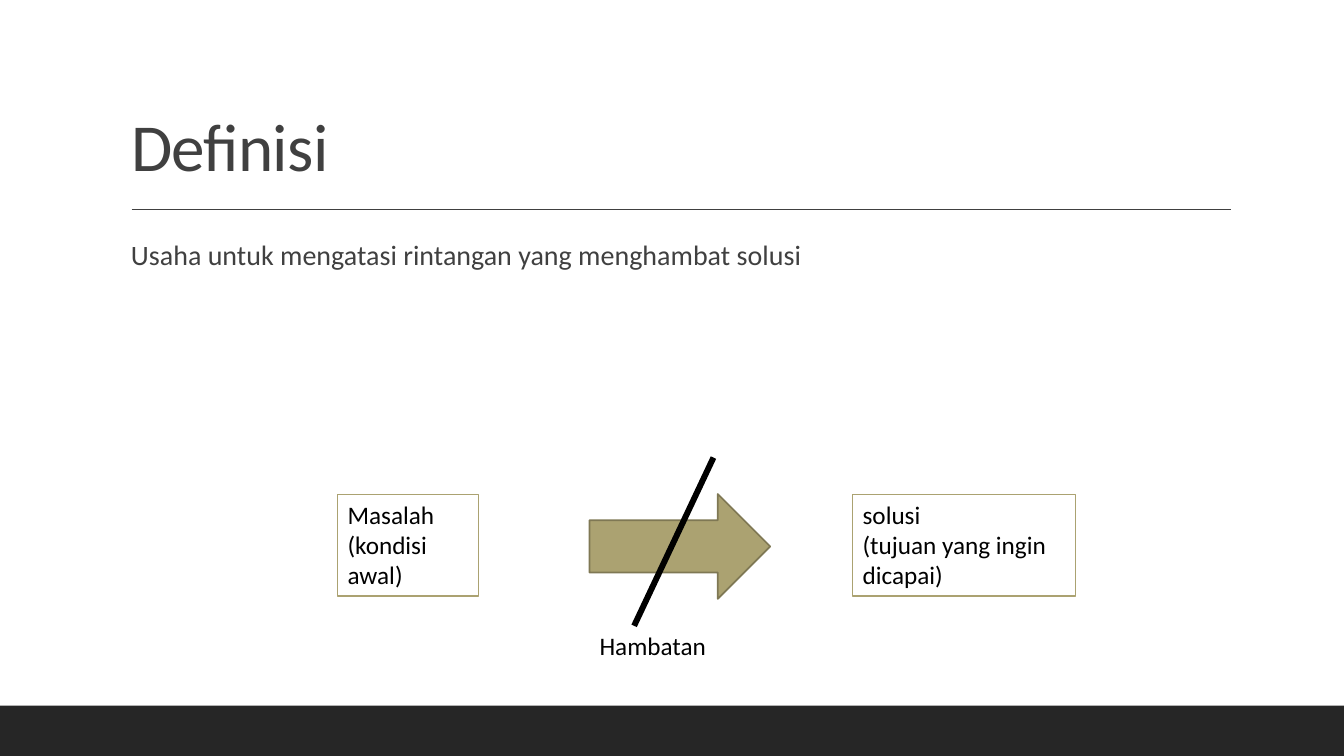
from pptx import Presentation
from pptx.dml.color import RGBColor
from pptx.enum.shapes import MSO_CONNECTOR as Connector, MSO_SHAPE as Shape
from pptx.enum.text import MSO_ANCHOR as Anchor, MSO_AUTO_SIZE as AutoSize, PP_ALIGN as Align
from pptx.oxml.ns import qn
from pptx.util import Cm, Pt

FONT = "Calibri"
DARK = RGBColor(0x26, 0x26, 0x26)
GREY = RGBColor(0x40, 0x40, 0x40)
BLACK = RGBColor(0, 0, 0)
OLIVE = RGBColor(0xAB, 0xA2, 0x71)
OLIVE_EDGE = RGBColor(0x7F, 0x78, 0x54)

FLOW_TOP = 12.45


def write(frame, lines, size, color):
    frame.word_wrap = True
    for number, line in enumerate(lines):
        para = frame.paragraphs[0] if number == 0 else frame.add_paragraph()
        para.text = line
        para.alignment = Align.LEFT
        para.font.name = FONT
        para.font.size = Pt(size)
        para.font.color.rgb = color


def add_title(page, text):
    title = page.shapes.title
    title.left, title.top, title.width, title.height = Cm(3.05), Cm(0.79), Cm(27.94), Cm(4.03)
    frame = title.text_frame
    write(frame, [text], 48, GREY)
    frame.auto_size = AutoSize.NONE
    frame.vertical_anchor = Anchor.BOTTOM
    para = frame.paragraphs[0]
    para.line_spacing = 0.9
    # Tighten the letters by half a point
    para.runs[0]._r.get_or_add_rPr().set("spc", "-50")


def add_text(page, left, top, width, height, lines, size=18, color=BLACK, border=None):
    box = page.shapes.add_textbox(Cm(left), Cm(top), Cm(width), Cm(height))
    write(box.text_frame, lines, size, color)
    if border is not None:
        box.line.color.rgb = border
        box.line.width = Pt(0.75)
    return box


def add_block(page, kind, left, top, width, height, fill, edge=None):
    block = page.shapes.add_shape(kind, Cm(left), Cm(top), Cm(width), Cm(height))
    block.shadow.inherit = False
    block.fill.solid()
    block.fill.fore_color.rgb = fill
    if edge is None:
        block.line.fill.background()
    else:
        block.line.color.rgb = edge
        block.line.width = Pt(1.25)


def add_line(page, start, end, color, weight):
    line = page.shapes.add_connector(
        Connector.STRAIGHT, Cm(start[0]), Cm(start[1]), Cm(end[0]), Cm(end[1]))
    line.line.color.rgb = color
    line.line.width = Pt(weight)
    properties = line._element.spPr
    properties.append(properties.makeelement(qn("a:effectLst"), {}))


def main():
    deck = Presentation()
    deck.slide_width, deck.slide_height = Cm(33.87), Cm(19.05)
    page = deck.slides.add_slide(deck.slide_layouts[5])

    # Footer band, title and rule
    add_block(page, Shape.RECTANGLE, 0, 17.78, 33.87, 1.27, DARK)
    add_line(page, (3.32, 5.28), (31.01, 5.28), GREY, 1)
    add_title(page, "Definisi")

    # Definition
    add_text(page, 3.05, 5.87, 27.94, 10.44,
             ["Usaha untuk mengatasi rintangan yang menghambat solusi"], 20, GREY)

    # Problem, arrow and solution
    add_block(page, Shape.RIGHT_ARROW, 14.86, FLOW_TOP, 4.55, 2.64, OLIVE, OLIVE_EDGE)
    add_text(page, 21.49, FLOW_TOP, 5.61, 2.57,
             ["solusi", "(tujuan yang ingin dicapai)"], border=OLIVE)
    add_text(page, 8.51, FLOW_TOP, 3.56, 2.57,
             ["Masalah", "(kondisi awal)"], border=OLIVE)

    # Obstacle across the arrow
    add_line(page, (15.98, 15.77), (17.98, 11.53), BLACK, 4.25)
    add_text(page, 14.86, 15.77, 3.61, 1.02, ["Hambatan"])

    deck.save("out.pptx")


if __name__ == "__main__":
    main()
